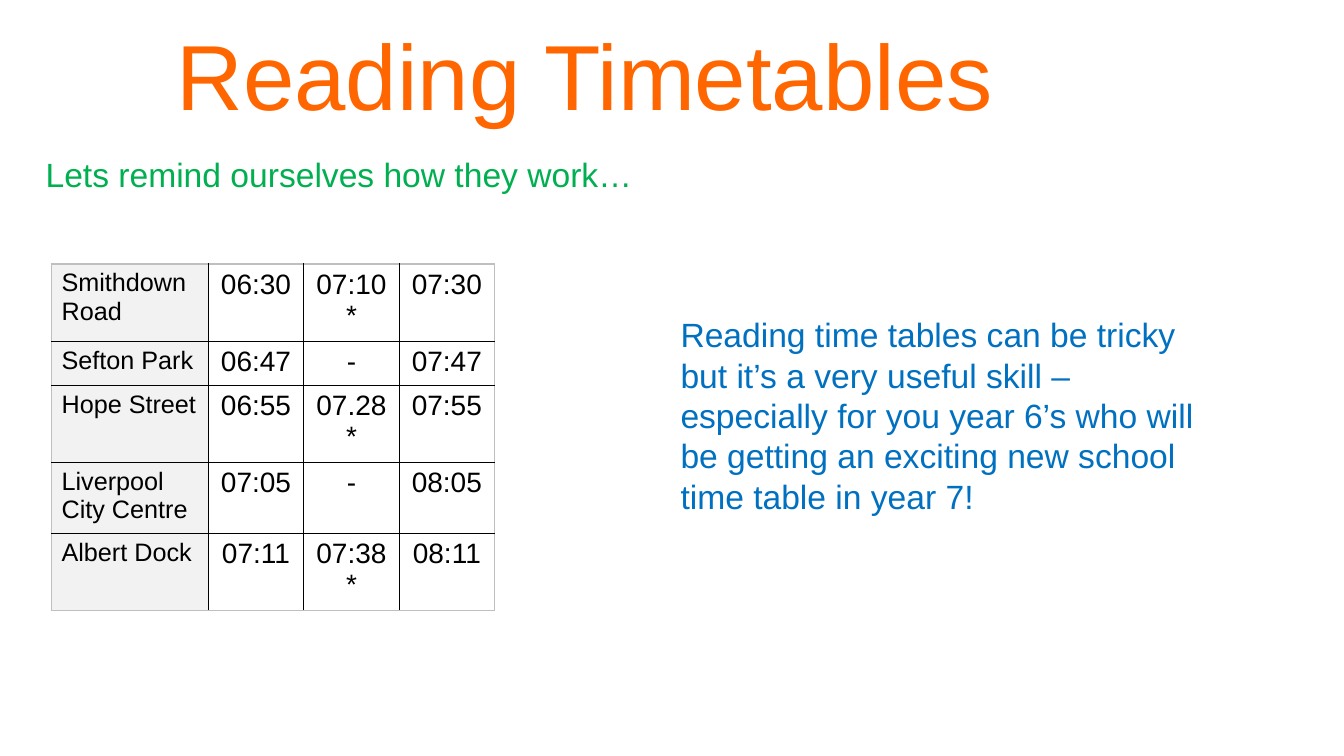
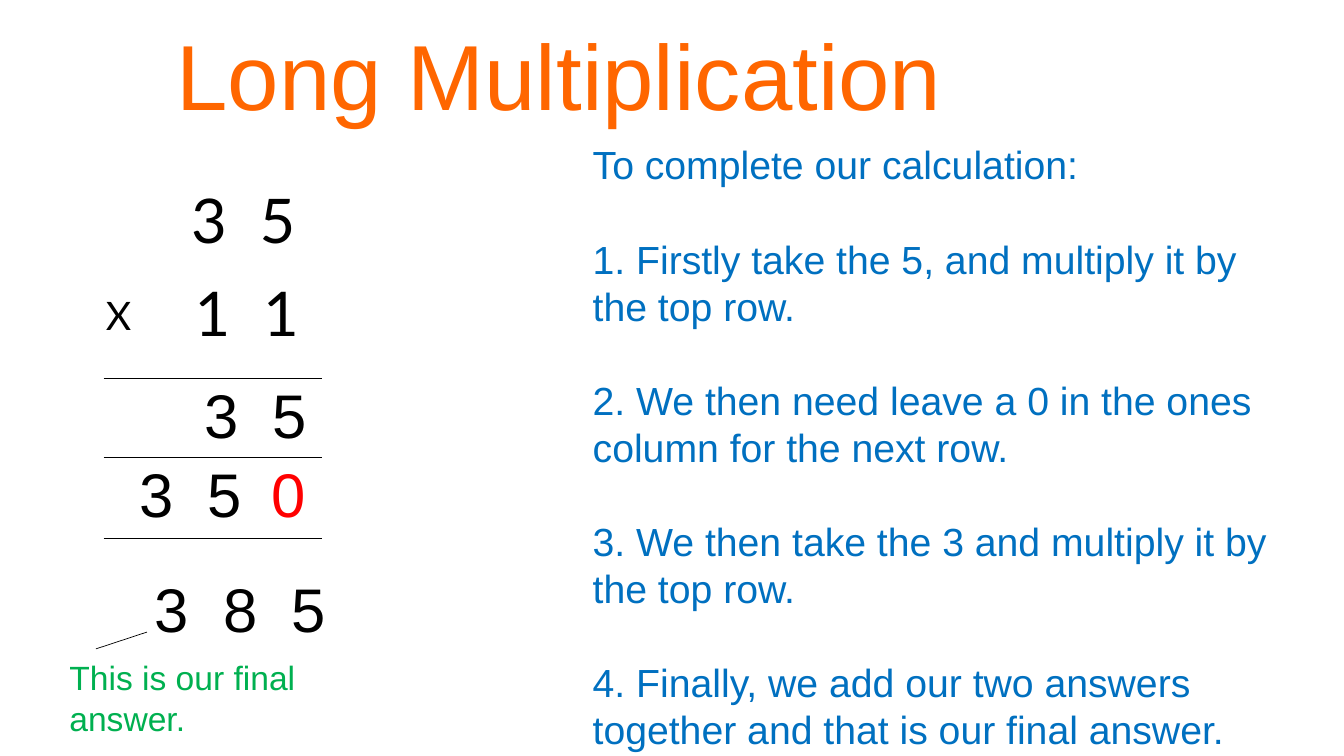
from lxml.etree import SubElement
from pptx import Presentation
from pptx.dml.color import RGBColor
from pptx.enum.shapes import MSO_CONNECTOR as Connector, MSO_SHAPE as Preset
from pptx.enum.text import MSO_ANCHOR as Anchor, PP_ALIGN as Align
from pptx.oxml.ns import qn
from pptx.util import Pt

ORANGE = RGBColor(0xFF, 0x66, 0x00)
GREEN = RGBColor(0x00, 0xB0, 0x50)
BLUE = RGBColor(0x00, 0x70, 0xC0)
RED = RGBColor(0xFF, 0x00, 0x00)
BLACK = RGBColor(0x00, 0x00, 0x00)
WHITE = RGBColor(0xFF, 0xFF, 0xFF)
STOP_FILL = RGBColor(0xF2, 0xF2, 0xF2)
OUTER_BORDER = RGBColor(0xBF, 0xBF, 0xBF)


def add_text(page, lines, left, top, width, height, size, color,
             font="Arial", gap=0, spread=0, panel=None):
    place = Pt(left), Pt(top), Pt(width), Pt(height)
    if panel is None:
        box = page.shapes.add_textbox(*place)
    else:
        box = page.shapes.add_shape(Preset.RECTANGLE, *place)
        box.shadow.inherit = False
        box.fill.solid()
        box.fill.fore_color.rgb = panel
        box.line.fill.background()
    frame = box.text_frame
    frame.word_wrap = True
    frame.vertical_anchor = Anchor.TOP
    for index, line in enumerate(lines):
        para = frame.add_paragraph() if index else frame.paragraphs[0]
        span = para.add_run()
        span.text = line
        para.alignment = Align.LEFT
        para.font.name = font
        para.font.size = Pt(size)
        para.font.color.rgb = color
        para.space_before = Pt(gap if index else 0)
        if spread:
            span._r.get_or_add_rPr().set("spc", str(int(spread * 100)))


def add_line(page, left, top, right, bottom, weight):
    line = page.shapes.add_connector(Connector.STRAIGHT, Pt(left), Pt(top), Pt(right), Pt(bottom))
    line.line.color.rgb = BLACK
    line.line.width = Pt(weight)
    SubElement(line._element.spPr, qn("a:effectLst"))


deck = Presentation()
deck.slide_width = Pt(960)
deck.slide_height = Pt(540)

pages = []
for title in ("Reading Timetables", "Long Multiplication"):
    page = deck.slides.add_slide(deck.slide_layouts[6])
    add_text(page, [title], 119, 9.2, 686, 87, 66, ORANGE)
    pages.append(page)
timetable_page, multiplication_page = pages

add_text(timetable_page, ["Lets remind ourselves how they work…"], 25.5, 106.5, 480, 36, 24, GREEN)
add_text(
    timetable_page,
    ["Reading time tables can be tricky but it’s a very useful skill – especially for you "
     "year 6’s who will be getting an exciting new school time table in year 7!"],
    479, 221, 395, 240, 24, BLUE, panel=WHITE,
)

STOPS = [
    ("Smithdown Road", "06:30", "07:10*", "07:30"),
    ("Sefton Park", "06:47", "-", "07:47"),
    ("Hope Street", "06:55", "07.28*", "07:55"),
    ("Liverpool City Centre", "07:05", "-", "08:05"),
    ("Albert Dock", "07:11", "07:38*", "08:11"),
]
COLUMN_WIDTHS = (112, 68.2, 68.2, 68.2)
ROW_HEIGHTS = (55, 30.8, 55, 50.6, 55)

table = timetable_page.shapes.add_table(
    len(STOPS), len(COLUMN_WIDTHS), Pt(36.8), Pt(188.6),
    Pt(sum(COLUMN_WIDTHS)), Pt(sum(ROW_HEIGHTS)),
).table
table.first_row = False
table.horz_banding = False
for column, width in zip(table.columns, COLUMN_WIDTHS):
    column.width = Pt(width)
for row, height in zip(table.rows, ROW_HEIGHTS):
    row.height = Pt(height)

for row_index, stop in enumerate(STOPS):
    for column_index, text in enumerate(stop):
        cell = table.cell(row_index, column_index)
        cell.text = text
        is_name = column_index == 0
        para = cell.text_frame.paragraphs[0]
        para.alignment = Align.LEFT if is_name else Align.CENTER
        para.font.name = "Arial"
        para.font.size = Pt(18 if is_name else 20)
        para.font.color.rgb = BLACK
        outer_sides = {
            "a:lnL": is_name,
            "a:lnR": column_index == len(stop) - 1,
            "a:lnT": row_index == 0,
            "a:lnB": row_index == len(STOPS) - 1,
        }
        properties = cell._tc.get_or_add_tcPr()
        for side, is_outer in outer_sides.items():
            border = SubElement(properties, qn(side), w=str(Pt(1)))
            fill = SubElement(border, qn("a:solidFill"))
            SubElement(fill, qn("a:srgbClr"), val=str(OUTER_BORDER if is_outer else BLACK))
        if is_name:
            cell.fill.solid()
            cell.fill.fore_color.rgb = STOP_FILL
        else:
            cell.fill.background()

DIGIT_ROWS = [
    ("3 5", 129.5, 126.5, "Lato", BLACK),
    ("1 1", 132, 192.5, "Lato", BLACK),
    ("3 5", 139, 265.5, "Arial", BLACK),
    ("3 5", 92.5, 322, "Arial", BLACK),
    ("0", 187, 322, "Arial", RED),
    ("3 8 5", 103.5, 404, "Arial", BLACK),
]
for digits, left, top, font, color in DIGIT_ROWS:
    add_text(multiplication_page, [digits], left, top, 34 + 28 * len(digits), 60, 44, color, font, spread=6.1)
add_text(multiplication_page, ["X"], 68.5, 204.5, 60, 41, 28, BLACK, "Lato")

for top in (270.5, 327, 384.5):
    add_line(multiplication_page, 74, top, 230.2, top, 1)
add_line(multiplication_page, 105, 451.5, 68.5, 463.5, 0.5)
add_text(multiplication_page, ["This is our final answer."], 42.5, 466, 180, 65.5, 24, GREEN)

add_text(
    multiplication_page,
    [
        "To complete our calculation:",
        "1. Firstly take the 5, and multiply it by the top row.",
        "2. We then need leave a 0 in the ones column for the next row.",
        "3. We then take the 3 and multiply it by the top row.",
        "4. Finally, we add our two answers together and that is our final answer.",
    ],
    416.3, 97, 520.5, 415, 28, BLUE, gap=33.6,
)

deck.save("out.pptx")
